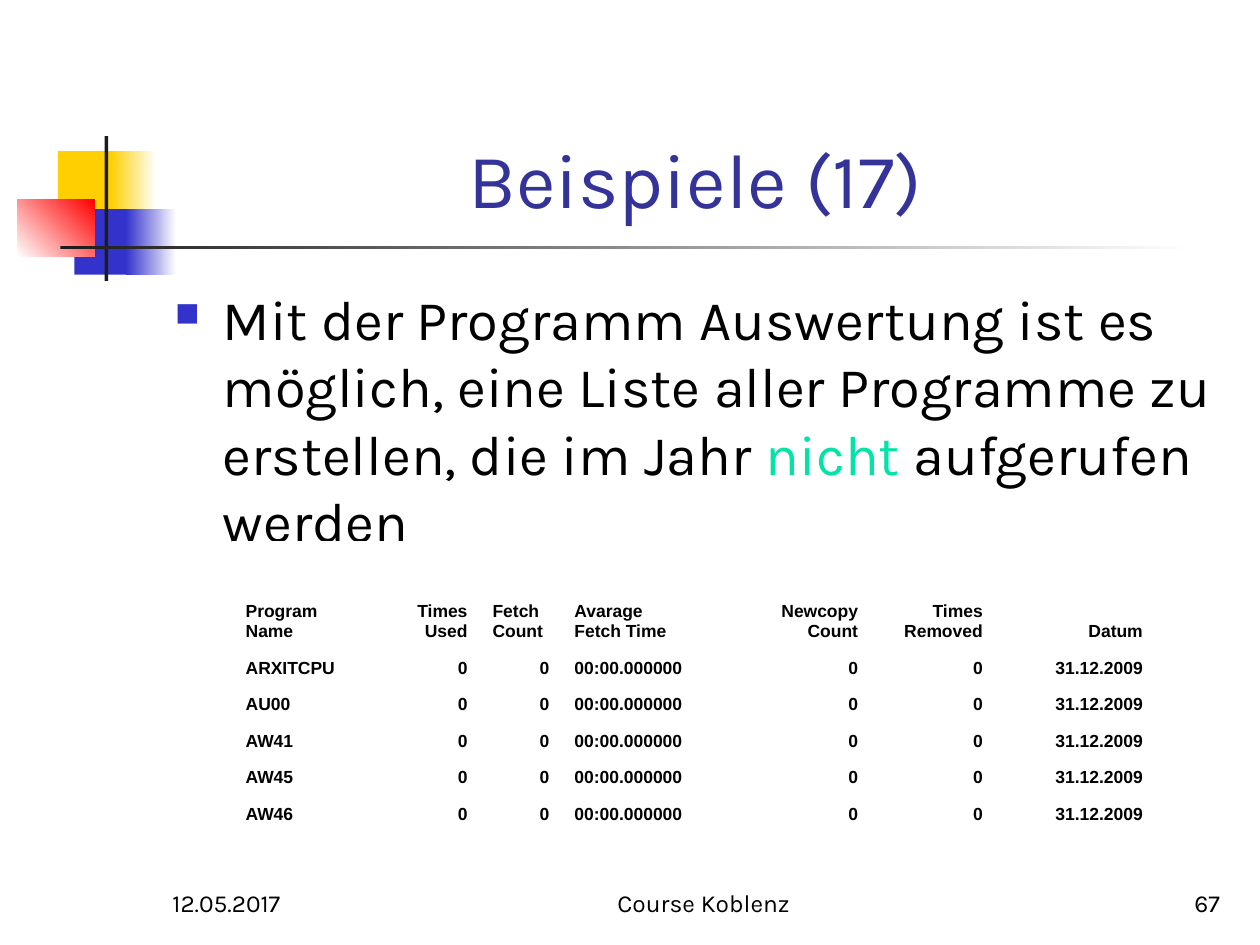
from copy import deepcopy
from dataclasses import dataclass

from lxml import etree
from pptx import Presentation
from pptx.dml.color import RGBColor as RGB
from pptx.enum.shapes import MSO_SHAPE as SHAPE
from pptx.enum.text import MSO_ANCHOR as ANCHOR, PP_ALIGN as ALIGN
from pptx.oxml.ns import qn
from pptx.util import Inches, Pt


@dataclass(frozen=True)
class Theme:
    black: str = "000000"
    white: str = "FFFFFF"
    dark: str = "1C1C1C"
    yellow: str = "FFCF01"
    blue: str = "3333CC"
    red: str = "FF0000"
    title: str = "333399"
    accent: str = "00E4A8"
    font: str = "Karla"
    table_font: str = "Arial"
    title_size: int = 44
    body_size: int = 32
    footer_size: int = 14
    table_size: int = 10


T = Theme()
LEFT, CENTER, RIGHT = ALIGN.LEFT, ALIGN.CENTER, ALIGN.RIGHT


def write(p, text, size=T.body_size, color=T.black, font=T.font, bold=False, align=LEFT):
    """Append text to a paragraph; a newline becomes a line break."""
    p.alignment = align
    for i, line in enumerate(text.split("\n")):
        if i:
            p.add_line_break()
            # The break carries the same type size as the text before it
            p._p[-1].append(deepcopy(p.runs[-1].font._element))
        r = p.add_run()
        r.text = line
        r.font.size, r.font.name, r.font.bold = Pt(size), font, bold
        r.font.color.rgb = RGB.from_string(color)


def add_box(x, y, w, h, anchor=ANCHOR.TOP):
    """Add a wrapping text box and return its first paragraph."""
    tf = s.shapes.add_textbox(Inches(x), Inches(y), Inches(w), Inches(h)).text_frame
    tf.word_wrap = True
    tf.vertical_anchor = anchor
    return tf.paragraphs[0]


prs = Presentation()
prs.slide_width, prs.slide_height = Inches(10), Inches(7.5)
s = prs.slides.add_slide(prs.slide_layouts[6])

# Corner ornament: one colour is solid, two make a gradient at the given angle
ornament = [
    (0.46, 1.2, 0.48, 0.52, [T.yellow], 0),
    (0.88, 1.2, 0.36, 0.52, [T.yellow, T.white], 0),
    (0.59, 1.66, 0.46, 0.52, [T.blue], 0),
    (1, 1.66, 0.4, 0.52, [T.blue, T.white], 0),
    (0.14, 1.58, 0.61, 0.46, [T.white, T.red], 45),
    (0.83, 1.08, 0.03, 1.15, [T.dark], 0),
    (0.48, 1.95, 9, 0.03, [T.dark, T.white], 0),
]
for x, y, w, h, colors, angle in ornament:
    sp = s.shapes.add_shape(SHAPE.RECTANGLE, Inches(x), Inches(y), Inches(w), Inches(h))
    sp.shadow.inherit = False
    sp.line.fill.background()
    if len(colors) == 1:
        sp.fill.solid()
        sp.fill.fore_color.rgb = RGB.from_string(colors[0])
    else:
        sp.fill.gradient()
        sp.fill.gradient_angle = angle
        for stop, color in zip(sp.fill.gradient_stops, colors):
            stop.color.rgb = RGB.from_string(color)

# Footer
for x, w, text, align in [
    (1.27, 2.08, "12.05.2017", LEFT),
    (4, 3.17, "Course Koblenz", CENTER),
    (7.7, 2.08, "67", RIGHT),
]:
    write(add_box(x, 6.83, w, 0.5, ANCHOR.BOTTOM), text, size=T.footer_size, align=align)

# Title
write(add_box(1.26, 0.23, 8.52, 1.6, ANCHOR.BOTTOM), "Beispiele (17)",
      size=T.title_size, color=T.title, align=CENTER)

# Bulleted statement
p = add_box(1.29, 2.21, 8.5, 4.5)
write(p, "Mit der Programm Auswertung ist es möglich, eine Liste aller Programme zu "
         "erstellen, die im Jahr ")
write(p, "nicht", color=T.accent)
write(p, " aufgerufen werden")
pPr = p._p.get_or_add_pPr()
pPr.set("marL", str(Inches(0.38)))
pPr.set("indent", str(-Inches(0.38)))
before = etree.SubElement(pPr, qn("a:spcBef"))
etree.SubElement(before, qn("a:spcPct"), val="20000")
bullet_color = etree.SubElement(pPr, qn("a:buClr"))
etree.SubElement(bullet_color, qn("a:srgbClr"), val=T.blue)
etree.SubElement(pPr, qn("a:buSzPct"), val="60000")
etree.SubElement(pPr, qn("a:buChar"), char="■")

# Program table; the last row stays empty
header = ["Program\nName", "Times\nUsed", "Fetch\nCount", "Avarage\nFetch Time",
          "Newcopy\nCount", "Times\nRemoved", "Datum"]
programs = ["ARXITCPU", "AU00", "AW41", "AW45", "AW46"]
rows = [header] + [[name, "0", "0", "00:00.000000", "0", "0", "31.12.2009"]
                   for name in programs]
aligns = [LEFT, RIGHT, RIGHT, LEFT, RIGHT, RIGHT, RIGHT]
widths = [1.29, 0.67, 0.65, 1.48, 0.97, 0.99, 1.27]
heights = [0.84] + [0.29] * len(programs) + [0.4]

table = s.shapes.add_table(len(heights), len(widths), Inches(1.85), Inches(4.3),
                           Inches(sum(widths)), Inches(sum(heights))).table
table.first_row = table.horz_banding = False
for col, w in zip(table.columns, widths):
    col.width = Inches(w)
for row, h in zip(table.rows, heights):
    row.height = Inches(h)
for cell in table.iter_cells():
    cell.fill.background()
    cell.vertical_anchor = ANCHOR.BOTTOM
for i, values in enumerate(rows):
    for j, text in enumerate(values):
        align = LEFT if text == "Fetch\nCount" else aligns[j]
        write(table.cell(i, j).text_frame.paragraphs[0], text, size=T.table_size,
              font=T.table_font, bold=True, align=align)

prs.save("out.pptx")
